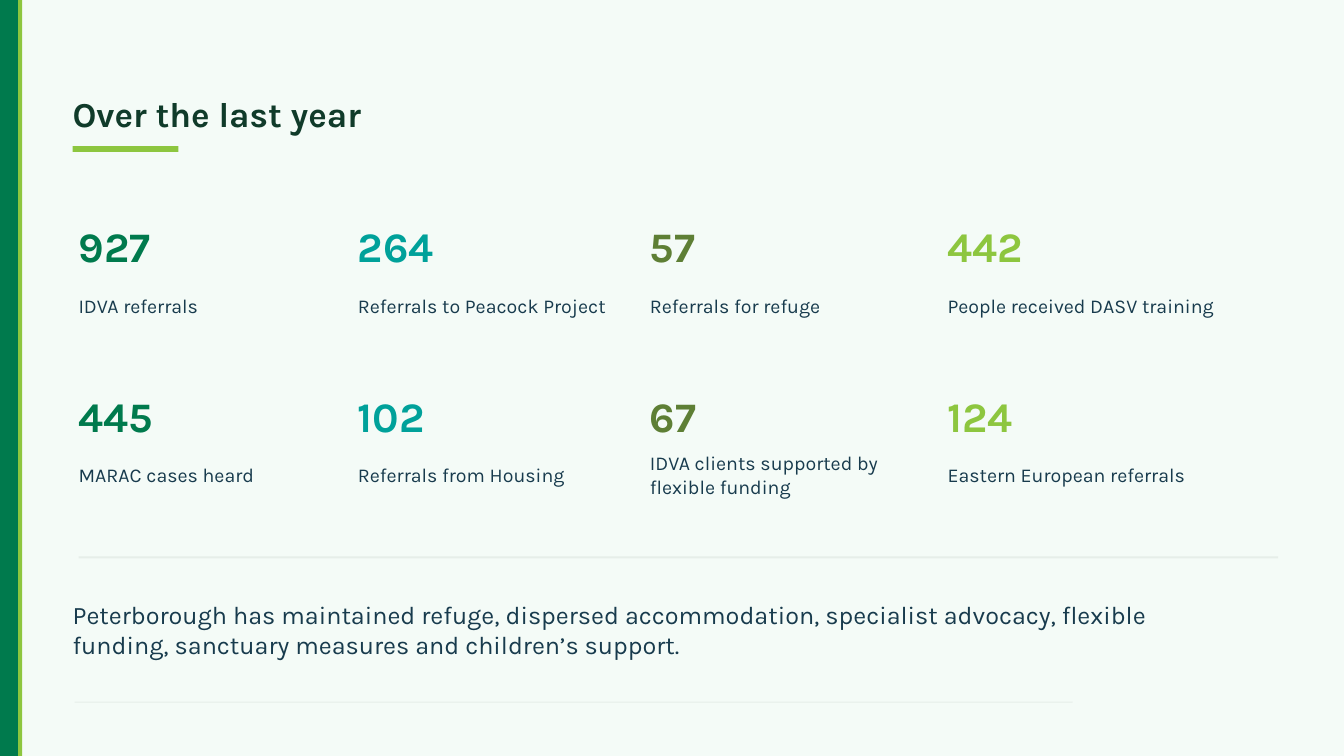
from dataclasses import dataclass

from pptx import Presentation
from pptx.dml.color import RGBColor
from pptx.enum import shapes, text
from pptx.shapes.autoshape import Shape
from pptx.slide import Slide
from pptx.util import Cm, Pt

FONT = "Karla"
MINT = RGBColor(0xF4, 0xFB, 0xF7)
GREEN = RGBColor(0x00, 0x7A, 0x4D)
LIME = RGBColor(0x8D, 0xC6, 0x3F)
TEAL = RGBColor(0x00, 0xA1, 0x9A)
OLIVE = RGBColor(0x5E, 0x7F, 0x35)
FOREST = RGBColor(0x10, 0x3B, 0x2A)
NAVY = RGBColor(0x18, 0x3B, 0x4D)
RULE_GREY = RGBColor(0xE6, 0xEE, 0xE9)

PAGE_WIDTH, PAGE_HEIGHT = 33.87, 19.05
MARGIN = 1.83
FIRST_ROW_TOP, ROW_PITCH = 5.54, 4.27
FIGURE_HEIGHT, LABEL_OFFSET, LABEL_HEIGHT = 1.32, 1.47, 1.37


@dataclass(frozen=True)
class Area:
    """A rectangle on the page, in centimetres."""
    left: float
    top: float
    width: float
    height: float


@dataclass(frozen=True)
class Style:
    size: int
    colour: RGBColor
    bold: bool = False
    anchor: text.MSO_ANCHOR = text.MSO_ANCHOR.MIDDLE


@dataclass(frozen=True)
class Bar:
    area: Area
    colour: RGBColor


@dataclass(frozen=True)
class Column:
    """One column of figures, with a (figure, label) pair for each row."""
    left: float
    width: float
    colour: RGBColor
    entries: tuple[tuple[str, str], ...]


BARS = (
    Bar(Area(0, 0, 0.46, PAGE_HEIGHT), GREEN),
    Bar(Area(0.46, 0, 0.1, PAGE_HEIGHT), LIME),
    Bar(Area(MARGIN, 3.68, 2.67, 0.15), LIME),
    Bar(Area(1.98, 14.02, 30.23, 0.05), RULE_GREY),
    Bar(Area(1.88, 17.68, 25.15, 0.03), RULE_GREY),
)

COLUMNS = (
    Column(1.98, 6.48, GREEN, (("927", "IDVA referrals"),
                               ("445", "MARAC cases heard"))),
    Column(9.02, 6.73, TEAL, (("264", "Referrals to Peacock Project"),
                              ("102", "Referrals from Housing"))),
    Column(16.38, 6.86, OLIVE, (("57", "Referrals for refuge"),
                                ("67", "IDVA clients supported by flexible funding"))),
    Column(23.88, 6.86, LIME, (("442", "People received DASV training"),
                               ("124", "Eastern European referrals"))),
)

TITLE_STYLE = Style(25, FOREST, bold=True)
LABEL_STYLE = Style(14, NAVY)
SUMMARY_STYLE = Style(18, NAVY, anchor=text.MSO_ANCHOR.TOP)
SUMMARY = ("Peterborough has maintained refuge, dispersed accommodation, "
           "specialist advocacy, flexible funding, sanctuary measures and "
           "children’s support.")


def draw_bar(page: Slide, bar: Bar) -> None:
    area = bar.area
    shape = page.shapes.add_shape(
        shapes.MSO_SHAPE.RECTANGLE,
        Cm(area.left), Cm(area.top), Cm(area.width), Cm(area.height))
    shape.shadow.inherit = False
    shape.fill.solid()
    shape.fill.fore_color.rgb = bar.colour
    shape.line.fill.background()


def write(box: Shape, area: Area, words: str, style: Style) -> None:
    """Place a text box or placeholder and fill it with one formatted run."""
    box.left, box.top = Cm(area.left), Cm(area.top)
    box.width, box.height = Cm(area.width), Cm(area.height)
    frame = box.text_frame
    frame.word_wrap = True
    frame.auto_size = text.MSO_AUTO_SIZE.NONE
    frame.vertical_anchor = style.anchor
    frame.margin_left = frame.margin_right = 0
    frame.margin_top = frame.margin_bottom = 0
    para = frame.paragraphs[0]
    para.alignment = text.PP_ALIGN.LEFT
    span = para.add_run()
    span.text = words
    span.font.name = FONT
    span.font.size = Pt(style.size)
    span.font.bold = style.bold
    span.font.color.rgb = style.colour


def draw_text(page: Slide, area: Area, words: str, style: Style) -> None:
    write(page.shapes.add_textbox(0, 0, 0, 0), area, words, style)


def draw_column(page: Slide, column: Column) -> None:
    for row, (figure, label) in enumerate(column.entries):
        top = FIRST_ROW_TOP + row * ROW_PITCH
        draw_text(page, Area(column.left, top, column.width, FIGURE_HEIGHT),
                  figure, Style(30, column.colour, bold=True))
        draw_text(page, Area(column.left, top + LABEL_OFFSET, column.width, LABEL_HEIGHT),
                  label, LABEL_STYLE)


def main() -> None:
    deck = Presentation()
    deck.slide_width, deck.slide_height = Cm(PAGE_WIDTH), Cm(PAGE_HEIGHT)
    page = deck.slides.add_slide(deck.slide_layouts.get_by_name("Title Only"))
    page.background.fill.solid()
    page.background.fill.fore_color.rgb = MINT

    write(page.shapes.title, Area(MARGIN, 2.31, 24.89, 1.12),
          "Over the last year", TITLE_STYLE)
    for bar in BARS:
        draw_bar(page, bar)
    for column in COLUMNS:
        draw_column(page, column)
    draw_text(page, Area(MARGIN, 15.09, 27.81, 2.34), SUMMARY, SUMMARY_STYLE)
    deck.save("out.pptx")


if __name__ == "__main__":
    main()
